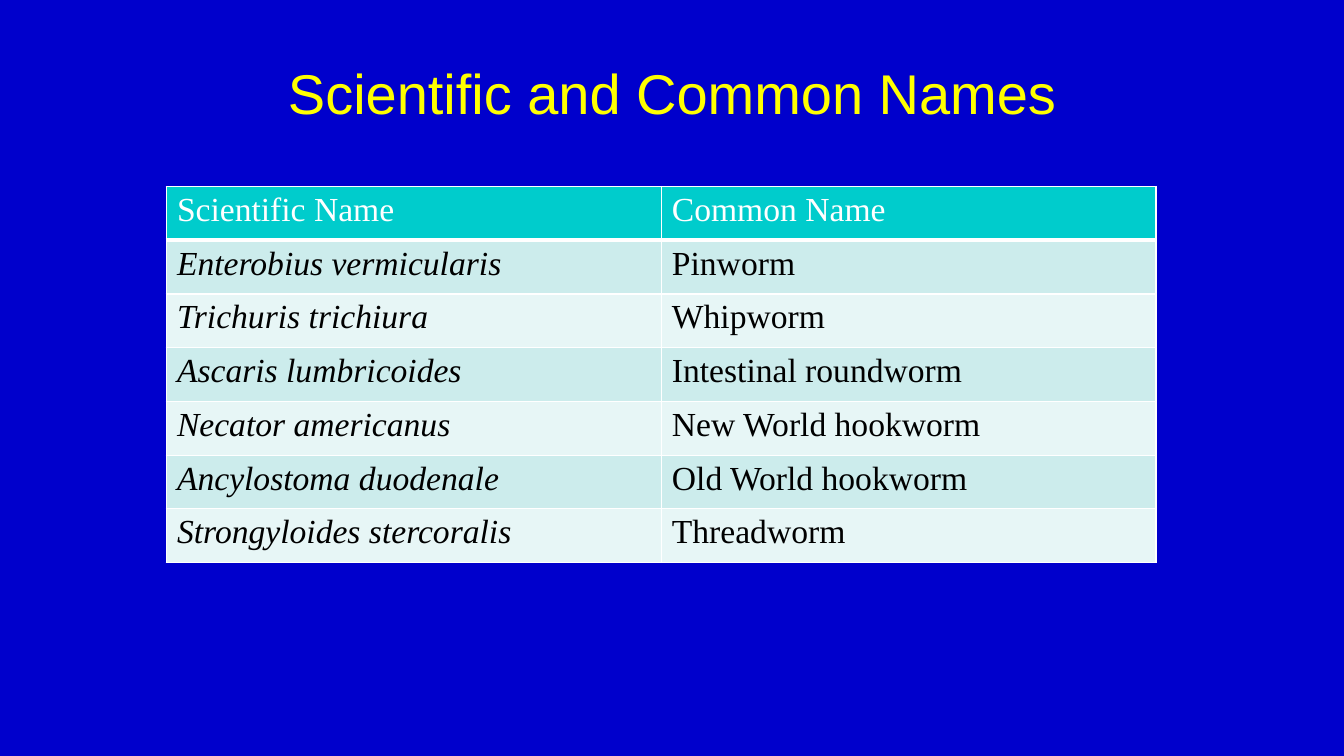
import pptx
import pptx.dml.color
import pptx.enum.text
import pptx.util
from lxml import etree
from pptx.oxml.ns import qn

Pt = pptx.util.Pt
WORM_NAMES = [
    ("Scientific Name", "Common Name"),
    ("Enterobius vermicularis", "Pinworm"),
    ("Trichuris trichiura", "Whipworm"),
    ("Ascaris lumbricoides", "Intestinal roundworm"),
    ("Necator americanus", "New World hookworm"),
    ("Ancylostoma duodenale", "Old World hookworm"),
    ("Strongyloides stercoralis", "Threadworm"),
]
HEADER_FILL = "00CCCC"
BAND_FILLS = ["E7F6F6", "CCECEC"]
COLUMN_WIDTH = 353.5
ROW_HEIGHT = 38.4


def color(hex_value):
    return pptx.dml.color.RGBColor.from_string(hex_value)


def fill_solid(fill, hex_value):
    fill.solid()
    fill.fore_color.rgb = color(hex_value)


def write_text(frame, text, *, font, size, hex_value, italic=False, align=None):
    paragraph = frame.paragraphs[0]
    paragraph.alignment = align
    run = paragraph.add_run()
    run.text = text
    run.font.name = font
    run.font.size = Pt(size)
    run.font.bold = False
    run.font.italic = italic
    run.font.color.rgb = color(hex_value)


def add_borders(cell, bottom_width):
    """Give a cell white borders, 1 pt wide except at the bottom."""
    properties = cell._tc.get_or_add_tcPr()
    for side, width in (("L", 1), ("R", 1), ("T", 1), ("B", bottom_width)):
        line = etree.SubElement(properties, qn(f"a:ln{side}"), w=str(Pt(width)))
        line_fill = etree.SubElement(line, qn("a:solidFill"))
        etree.SubElement(line_fill, qn("a:srgbClr"), val="FFFFFF")


def add_title(slide, text):
    title = slide.shapes.title
    title.left, title.top, title.width, title.height = Pt(72), Pt(18), Pt(816), Pt(96)
    title.text_frame.vertical_anchor = pptx.enum.text.MSO_ANCHOR.MIDDLE
    write_text(title.text_frame, text, font="Arial", size=40, hex_value="FFFF00",
               align=pptx.enum.text.PP_ALIGN.CENTER)


def add_name_table(slide, names):
    rows, columns = len(names), len(names[0])
    table = slide.shapes.add_table(
        rows, columns, Pt(118.8), Pt(133.2),
        Pt(COLUMN_WIDTH * columns), Pt(ROW_HEIGHT * rows)).table
    for row, row_names in enumerate(names):
        is_header = row == 0
        for column, name in enumerate(row_names):
            cell = table.cell(row, column)
            cell.margin_left = cell.margin_right = Pt(7.7)
            cell.margin_top = cell.margin_bottom = Pt(3.6)
            add_borders(cell, bottom_width=3 if is_header else 1)
            fill_solid(cell.fill, HEADER_FILL if is_header else BAND_FILLS[row % 2])
            write_text(cell.text_frame, name, font="Times New Roman", size=24,
                       hex_value="FFFFFF" if is_header else "000000",
                       italic=not is_header and column == 0)


def main():
    presentation = pptx.Presentation()
    presentation.slide_width, presentation.slide_height = Pt(960), Pt(540)
    slide = presentation.slides.add_slide(presentation.slide_layouts[5])
    fill_solid(slide.background.fill, "0000CC")
    add_title(slide, "Scientific and Common Names")
    add_name_table(slide, WORM_NAMES)
    presentation.save("out.pptx")


if __name__ == "__main__":
    main()
